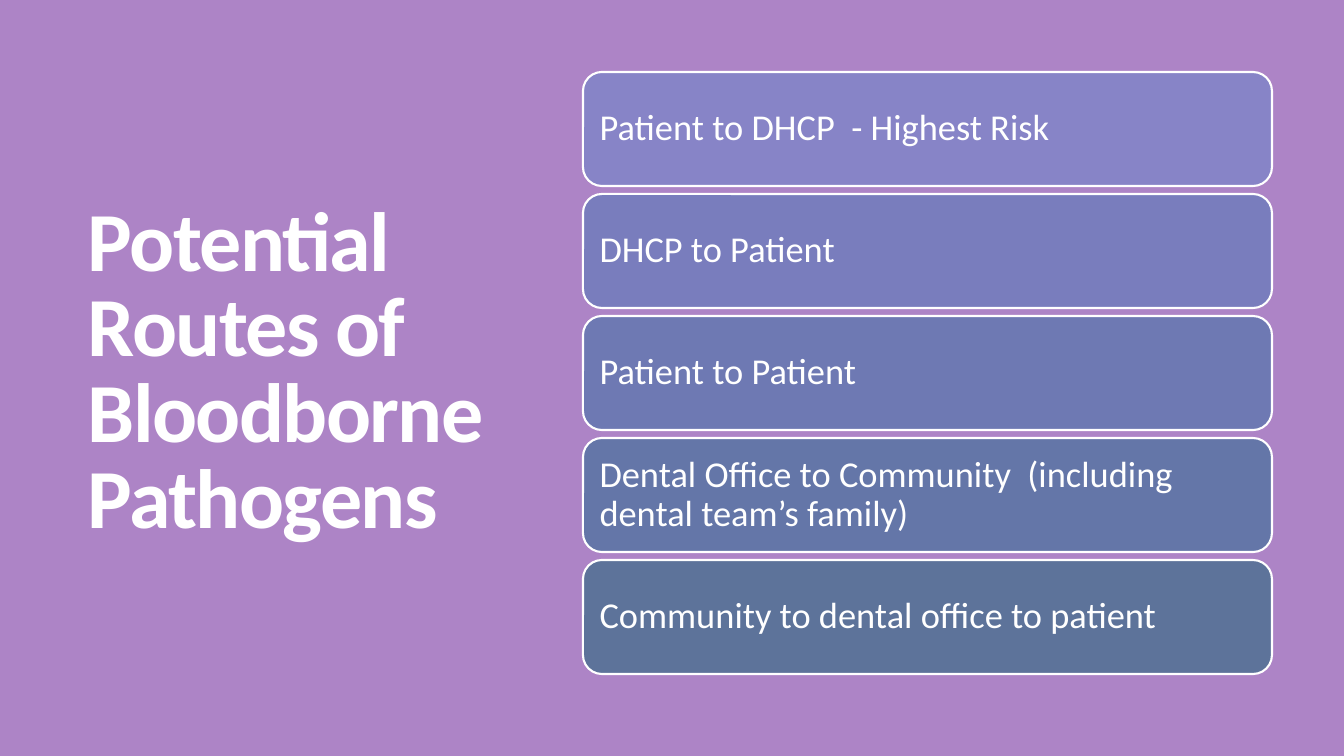
from pptx import Presentation
from pptx.dml.color import RGBColor
from pptx.enum.shapes import MSO_SHAPE as SHAPE
from pptx.enum.text import MSO_ANCHOR as ANCHOR, PP_ALIGN as ALIGN
from pptx.util import Pt

TITLE = "Potential Routes of Bloodborne Pathogens"
ROUTES = [
    ("Patient to DHCP  - Highest Risk", "8784C7"),
    ("DHCP to Patient", "797DBD"),
    ("Patient to Patient", "6E79B3"),
    ("Dental Office to Community  (including dental team’s family)", "6476A8"),
    ("Community to dental office to patient", "5D739A"),
]
BACKGROUND, WHITE = "AD84C6", "FFFFFF"
SLIDE_W, SLIDE_H = 1344, 756
TITLE_BOX = (78, 71, 440, 606)
CARD_X, CARD_Y, CARD_W, CARD_H, CARD_GAP = 583, 72, 689, 114, 8


def px(n):
    return round(n * 914400 / 100.8)


def color(value):
    return RGBColor.from_string(value)


def write(sp, text, size, spacing, inset, bold=False, tracking=None):
    tf = sp.text_frame
    tf.word_wrap = True
    tf.vertical_anchor = ANCHOR.MIDDLE
    tf.margin_left = tf.margin_right = tf.margin_top = tf.margin_bottom = px(inset)
    p = tf.paragraphs[0]
    p.alignment = ALIGN.LEFT
    p.line_spacing = spacing
    r = p.add_run()
    r.text = text
    r.font.name = "Calibri"
    r.font.size = Pt(size)
    r.font.bold = bold
    r.font.color.rgb = color(WHITE)
    if tracking is not None:
        r.font._element.set("spc", str(tracking))


def add_card(s, i, text, fill):
    y = CARD_Y + i * (CARD_H + CARD_GAP)
    sp = s.shapes.add_shape(SHAPE.ROUNDED_RECTANGLE, px(CARD_X), px(y), px(CARD_W), px(CARD_H))
    sp.shadow.inherit = False
    sp.fill.solid()
    sp.fill.fore_color.rgb = color(fill)
    sp.line.color.rgb = color(WHITE)
    sp.line.width = Pt(1.5)
    write(sp, text, size=26, spacing=0.9, inset=11)


def main():
    prs = Presentation()
    prs.slide_width, prs.slide_height = px(SLIDE_W), px(SLIDE_H)
    s = prs.slides.add_slide(prs.slide_layouts[6])
    s.background.fill.solid()
    s.background.fill.fore_color.rgb = color(BACKGROUND)
    title = s.shapes.add_textbox(*map(px, TITLE_BOX))
    write(title, TITLE, size=60, spacing=0.85, inset=10, bold=True, tracking=-120)
    for i, (text, fill) in enumerate(ROUTES):
        add_card(s, i, text, fill)
    prs.save("out.pptx")


if __name__ == "__main__":
    main()
